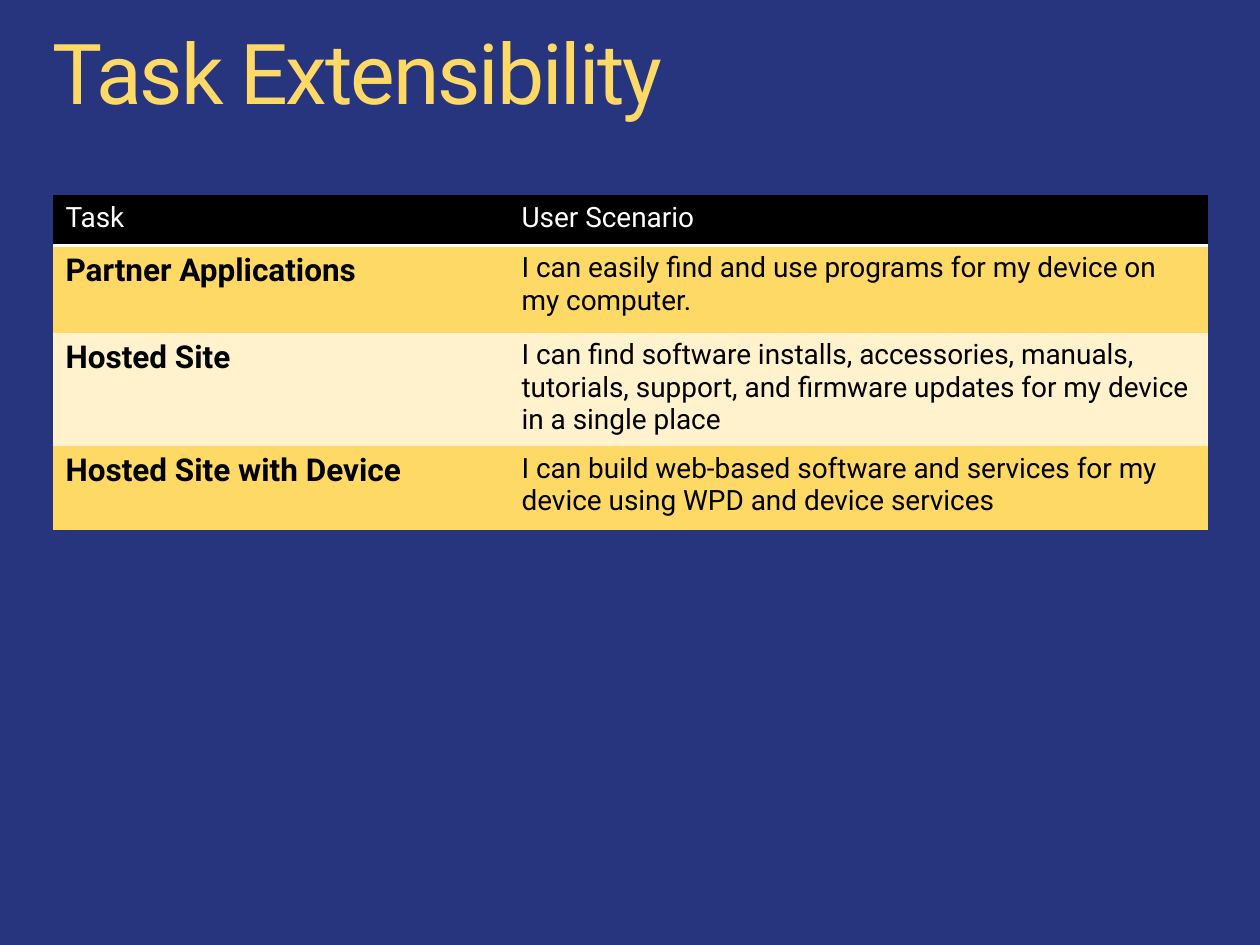
from pptx import Presentation
from pptx.dml.color import RGBColor
from pptx.oxml import parse_xml
from pptx.oxml.ns import nsdecls
from pptx.util import Inches, Pt

FONT = "Roboto"
COLORS = {
    "background": "26357E",
    "gold": "FFD966",
    "cream": "FFF2CC",
    "black": "000000",
    "white": "FFFFFF",
}
LEFT = 0.42
COL_WIDTHS = [3.62, 5.55]
ROW_HEIGHTS = [0.4, 0.69, 0.69, 0.67]
ROWS = [
    ("Task", "User Scenario"),
    ("Partner Applications",
     "I can easily find and use programs for my device on my computer."),
    ("Hosted Site",
     "I can find software installs, accessories, manuals, tutorials, support, "
     "and firmware updates for my device in a single place"),
    ("Hosted Site with Device",
     "I can build web-based software and services for my device using WPD "
     "and device services"),
]


def rgb(name):
    return RGBColor.from_string(COLORS[name])


def set_text(tf, text, size=16, color="black", bold=False, line=None, spacing=None):
    p = tf.paragraphs[0]
    p.line_spacing = line
    r = p.add_run()
    r.text = text
    r.font.name = FONT
    r.font.size = Pt(size)
    r.font.bold = bold
    r.font.color.rgb = rgb(color)
    if spacing is not None:
        r.font._element.set("spc", str(round(spacing * 100)))


def set_borders(cell, ruled_side):
    """Rule one side in white and clear the other three."""
    tc_pr = cell._tc.get_or_add_tcPr()
    for side in "LRTB":
        if side == ruled_side:
            fill = f'<a:solidFill><a:srgbClr val="{COLORS["white"]}"/></a:solidFill>'
        else:
            fill = "<a:noFill/>"
        tc_pr.append(parse_xml(
            f'<a:ln{side} {nsdecls("a")} w="{Pt(2)}">{fill}</a:ln{side}>'))


def add_title(s, text):
    box = s.shapes.add_textbox(Inches(LEFT), Inches(0.25), Inches(9.16), Inches(0.73))
    tf = box.text_frame
    tf.word_wrap = True
    tf.margin_left = tf.margin_right = tf.margin_top = tf.margin_bottom = 0
    set_text(tf, text, size=48, color="gold", line=0.9, spacing=-1.2)


def add_task_table(s):
    frame = s.shapes.add_table(
        len(ROWS), len(COL_WIDTHS), Inches(LEFT), Inches(1.55),
        Inches(sum(COL_WIDTHS)), Inches(sum(ROW_HEIGHTS)))
    table = frame.table
    table.horz_banding = False
    for column, width in zip(table.columns, COL_WIDTHS):
        column.width = Inches(width)

    for i, (texts, height) in enumerate(zip(ROWS, ROW_HEIGHTS)):
        table.rows[i].height = Inches(height)
        header = i == 0
        fill = "black" if header else ("cream", "gold")[i % 2]
        for j, text in enumerate(texts):
            cell = table.cell(i, j)
            # The white rule lies between the header and the first task
            set_borders(cell, {0: "B", 1: "T"}.get(i))
            cell.fill.solid()
            cell.fill.fore_color.rgb = rgb(fill)
            task_name = j == 0 and not header
            set_text(cell.text_frame, text, size=18 if task_name else 16,
                     color="white" if header else "black", bold=task_name)


def main():
    prs = Presentation()
    prs.slide_width, prs.slide_height = Inches(10), Inches(7.5)
    s = prs.slides.add_slide(prs.slide_layouts[6])
    s.background.fill.solid()
    s.background.fill.fore_color.rgb = rgb("background")
    add_title(s, "Task Extensibility")
    add_task_table(s)
    prs.save("out.pptx")


if __name__ == "__main__":
    main()
